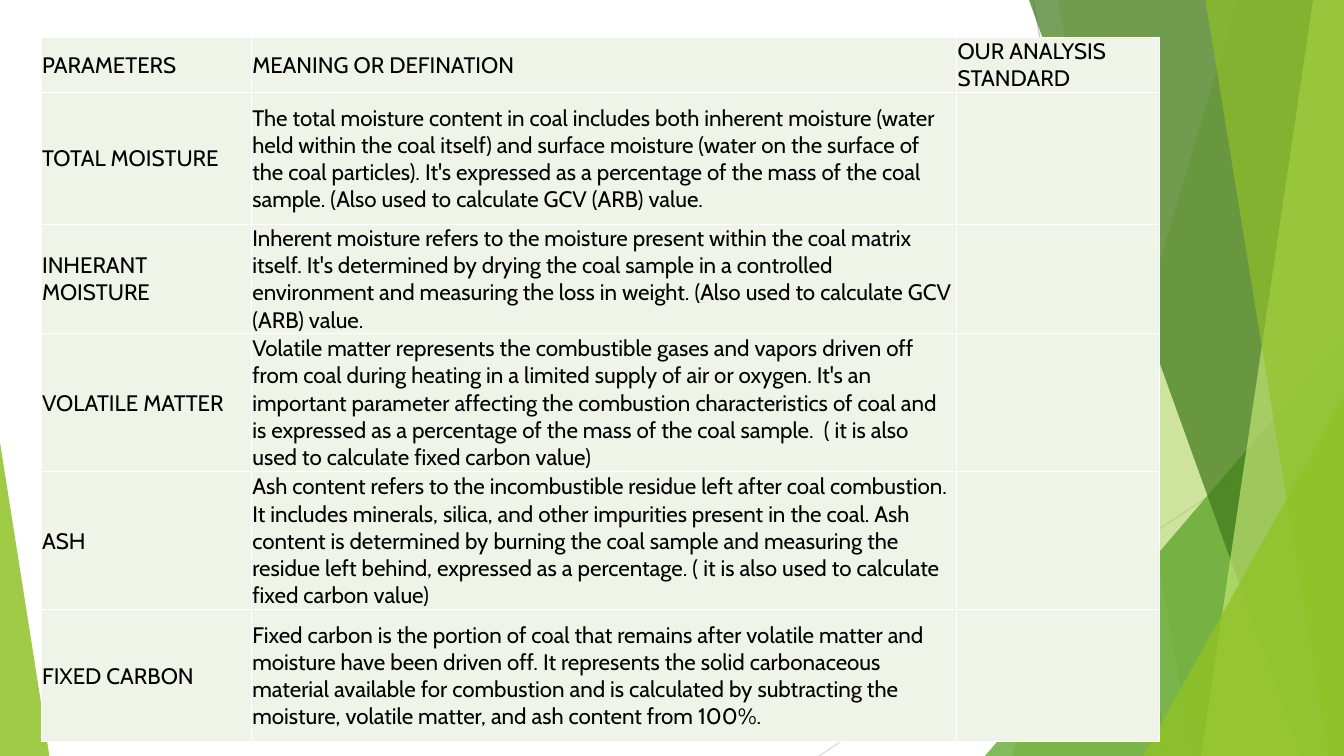
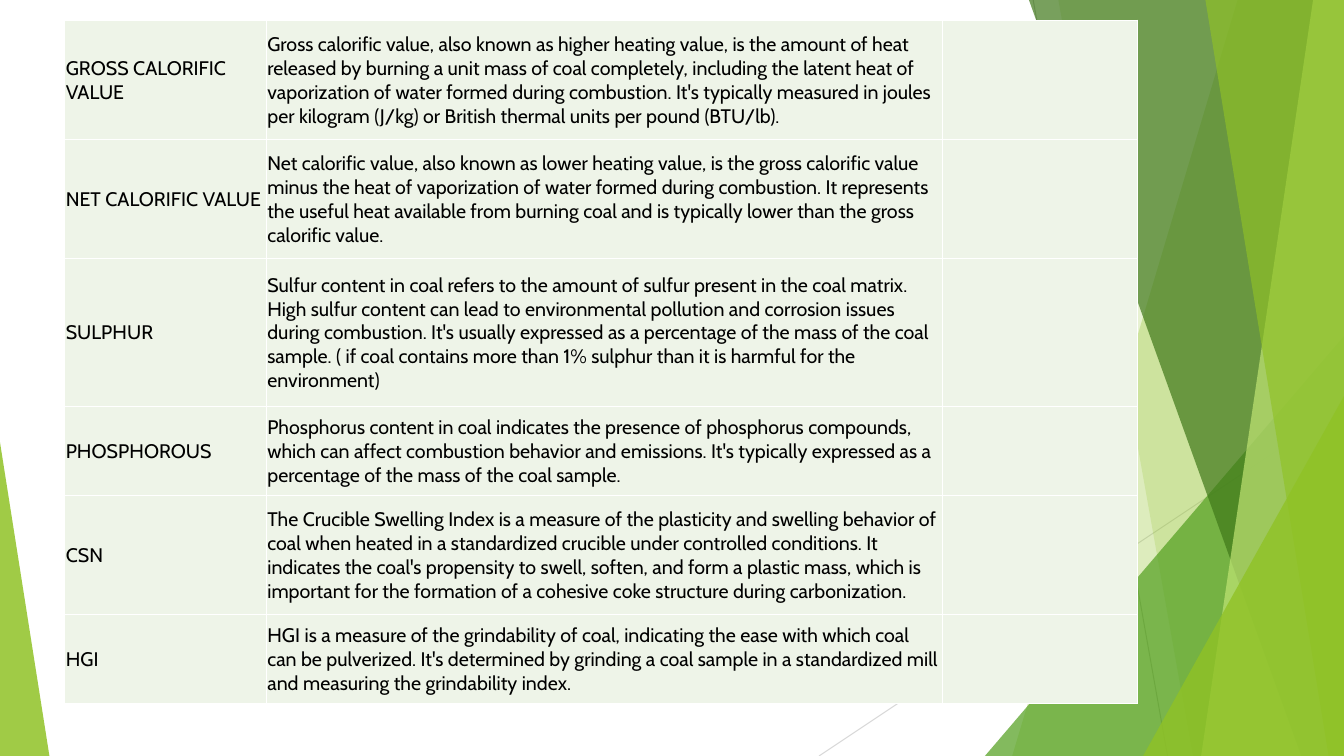
from dataclasses import dataclass
from typing import Any, Union

from lxml.etree import SubElement
from pptx import Presentation
from pptx.dml.color import RGBColor
from pptx.enum.shapes import MSO_CONNECTOR, MSO_SHAPE
from pptx.enum.text import MSO_ANCHOR
from pptx.oxml import parse_xml
from pptx.oxml.ns import nsdecls, qn
from pptx.util import Pt

WIDTH, HEIGHT = 960, 540
BLANK_LAYOUT = 6
FONT = "Cabin"
TEXT, PAPER, CELL = "000000", "FFFFFF", "EEF4E8"
LIME, GREEN, FOREST, PALE = "90C226", "54A021", "3F7819", "C0E474"


@dataclass(frozen=True)
class Ray:
    start: tuple[float, float]
    end: tuple[float, float]
    colour: str


@dataclass(frozen=True)
class Band:
    top_x: float
    bottom_x: float
    colour: str
    opacity: int


@dataclass(frozen=True)
class Wedge:
    left: float
    top: float
    width: float
    apex: float
    colour: str
    opacity: int


@dataclass(frozen=True)
class Parameter:
    name: str
    meaning: str
    height: float
    standard: str = ""


@dataclass(frozen=True)
class ParameterTable:
    left: float
    top: float
    columns: tuple[float, ...]
    size: float
    rows: tuple[Parameter, ...]


Facet = Union[Ray, Band, Wedge]

FACETS: tuple[Facet, ...] = (
    Ray((738, 0), (834, 540), "BFBFBF"),
    Ray((960, 290), (585, 540), "D9D9D9"),
    Band(884, 723, LIME, 30),
    Band(756, 852, LIME, 20),
    Wedge(703.5, 240, 256.5, 1, GREEN, 72),
    Band(735, 929.5, FOREST, 70),
    Band(938, 858, PALE, 70),
    Band(861, 949, LIME, 65),
    Wedge(816.5, 283, 143.5, 1, LIME, 80),
    Wedge(0, 316, 35.3, 0, LIME, 85),
)

TABLES = (
    ParameterTable(29.4, 26.6, (150.2, 503.7, 144.8), 16, (
        Parameter("PARAMETERS", "MEANING OR DEFINATION", 38.4, "OUR ANALYSIS STANDARD"),
        Parameter(
            "TOTAL MOISTURE",
            "The total moisture content in coal includes both inherent moisture (water held within "
            "the coal itself) and surface moisture (water on the surface of the coal particles). "
            "It's expressed as a percentage of the mass of the coal sample. (Also used to calculate "
            "GCV (ARB) value.", 94.3),
        Parameter(
            "INHERANT MOISTURE",
            "Inherent moisture refers to the moisture present within the coal matrix itself. It's "
            "determined by drying the coal sample in a controlled environment and measuring the "
            "loss in weight. (Also used to calculate GCV (ARB) value.", 75.6),
        Parameter(
            "VOLATILE MATTER",
            "Volatile matter represents the combustible gases and vapors driven off from coal "
            "during heating in a limited supply of air or oxygen. It's an important parameter "
            "affecting the combustion characteristics of coal and is expressed as a percentage of "
            "the mass of the coal sample.  ( it is also used to calculate fixed carbon value)", 98.6),
        Parameter(
            "ASH",
            "Ash content refers to the incombustible residue left after coal combustion. It "
            "includes minerals, silica, and other impurities present in the coal. Ash content is "
            "determined by burning the coal sample and measuring the residue left behind, "
            "expressed as a percentage. ( it is also used to calculate fixed carbon value)", 98.6),
        Parameter(
            "FIXED CARBON",
            "Fixed carbon is the portion of coal that remains after volatile matter and moisture "
            "have been driven off. It represents the solid carbonaceous material available for "
            "combustion and is calculated by subtracting the moisture, volatile matter, and ash "
            "content from 100%.", 94.3),
    )),
    ParameterTable(46.3, 14.5, (144, 483, 139), 14, (
        Parameter(
            "GROSS CALORIFIC VALUE",
            "Gross calorific value, also known as higher heating value, is the amount of heat "
            "released by burning a unit mass of coal completely, including the latent heat of "
            "vaporization of water formed during combustion. It's typically measured in joules per "
            "kilogram (J/kg) or British thermal units per pound (BTU/lb).", 85),
        Parameter(
            "NET CALORIFIC VALUE",
            "Net calorific value, also known as lower heating value, is the gross calorific value "
            "minus the heat of vaporization of water formed during combustion. It represents the "
            "useful heat available from burning coal and is typically lower than the gross "
            "calorific value.", 85),
        Parameter(
            "SULPHUR",
            "Sulfur content in coal refers to the amount of sulfur present in the coal matrix. "
            "High sulfur content can lead to environmental pollution and corrosion issues during "
            "combustion. It's usually expressed as a percentage of the mass of the coal sample. "
            "( if coal contains more than 1% sulphur than it is harmful for the environment)", 106),
        Parameter(
            "PHOSPHOROUS",
            "Phosphorus content in coal indicates the presence of phosphorus compounds, which can "
            "affect combustion behavior and emissions. It's typically expressed as a percentage of "
            "the mass of the coal sample.", 63.5),
        Parameter(
            "CSN",
            "The Crucible Swelling Index is a measure of the plasticity and swelling behavior of "
            "coal when heated in a standardized crucible under controlled conditions. It indicates "
            "the coal's propensity to swell, soften, and form a plastic mass, which is important "
            "for the formation of a cohesive coke structure during carbonization.", 85),
        Parameter(
            "HGI",
            "HGI is a measure of the grindability of coal, indicating the ease with which coal can "
            "be pulverized. It's determined by grinding a coal sample in a standardized mill and "
            "measuring the grindability index.", 63.5),
    )),
)


def colour(value: str) -> RGBColor:
    return RGBColor.from_string(value)


def apply_format(target: Any, values: dict[str, Any]) -> None:
    for name, value in values.items():
        setattr(target, name, value)


def paint(target: Any, value: str) -> None:
    target.fill.solid()
    target.fill.fore_color.rgb = colour(value)


def draw_ray(page: Any, ray: Ray) -> Any:
    points = [Pt(value) for value in (*ray.start, *ray.end)]
    connector = page.shapes.add_connector(MSO_CONNECTOR.STRAIGHT, *points)
    connector.line.width = Pt(0.75)
    connector.line.color.rgb = colour(ray.colour)
    SubElement(connector.element.spPr, qn("a:effectLst"))
    return connector


def draw_facet(page: Any, facet: Facet) -> Any:
    if isinstance(facet, Ray):
        return draw_ray(page, facet)
    if isinstance(facet, Band):
        corners = [(WIDTH, 0), (WIDTH, HEIGHT), (facet.bottom_x, HEIGHT)]
        outline = page.shapes.build_freeform(Pt(facet.top_x), 0)
        outline.add_line_segments([(Pt(x), Pt(y)) for x, y in corners])
        shape = outline.convert_to_shape()
    else:
        shape = page.shapes.add_shape(
            MSO_SHAPE.ISOSCELES_TRIANGLE, Pt(facet.left), Pt(facet.top),
            Pt(facet.width), Pt(HEIGHT - facet.top))
        shape.adjustments[0] = facet.apex
    paint(shape, facet.colour)
    tint = shape.element.spPr.find(f".//{qn('a:srgbClr')}")
    SubElement(tint, qn("a:alpha")).set("val", str(facet.opacity * 1000))
    shape.line.fill.background()
    shape.shadow.inherit = False
    return shape


def decorate_layout(layout: Any, page: Any) -> None:
    for placeholder in list(layout.placeholders):
        layout.shapes.element.remove(placeholder.element)
    shapes = [draw_facet(page, facet) for facet in FACETS]
    for shape in shapes:
        layout.shapes.element.append(shape.element)


def draw_borders(cell: Any) -> None:
    properties = cell._tc.get_or_add_tcPr()
    for position, side in enumerate(("lnL", "lnR", "lnT", "lnB")):
        properties.insert(position, parse_xml(
            f'<a:{side} {nsdecls("a")} w="12700"><a:solidFill>'
            f'<a:srgbClr val="{PAPER}"/></a:solidFill></a:{side}>'))


def fill_cell(cell: Any, text: str, size: float, anchor: MSO_ANCHOR) -> None:
    apply_format(cell, {
        "margin_left": Pt(0.7), "margin_right": Pt(0.7), "margin_top": Pt(0.7),
        "margin_bottom": 0, "vertical_anchor": anchor})
    paint(cell, CELL)
    draw_borders(cell)
    if text:
        span = cell.text_frame.paragraphs[0].add_run()
        apply_format(span, {"text": text})
        apply_format(span.font, {"name": FONT, "size": Pt(size), "bold": False})
        span.font.color.rgb = colour(TEXT)


def draw_table(page: Any, content: ParameterTable) -> None:
    height = sum(row.height for row in content.rows)
    table = page.shapes.add_table(
        len(content.rows), len(content.columns), Pt(content.left), Pt(content.top),
        Pt(sum(content.columns)), Pt(height)).table
    apply_format(table, {"first_row": False, "horz_banding": False})
    for column, width in zip(table.columns, content.columns):
        column.width = Pt(width)
    anchors = (MSO_ANCHOR.MIDDLE, MSO_ANCHOR.MIDDLE, MSO_ANCHOR.BOTTOM)
    for row, parameter in zip(table.rows, content.rows):
        row.height = Pt(parameter.height)
        texts = (parameter.name, parameter.meaning, parameter.standard)
        for cell, text, anchor in zip(row.cells, texts, anchors):
            fill_cell(cell, text, content.size, anchor)


def main() -> None:
    deck = Presentation()
    apply_format(deck, {"slide_width": Pt(WIDTH), "slide_height": Pt(HEIGHT)})
    layout = deck.slide_layouts[BLANK_LAYOUT]
    paint(layout.background, PAPER)
    pages = [deck.slides.add_slide(layout) for _ in TABLES]
    for page in pages:
        for placeholder in list(page.placeholders):
            page.shapes.element.remove(placeholder.element)
    decorate_layout(layout, pages[0])
    for page, content in zip(pages, TABLES):
        draw_table(page, content)
    deck.save("out.pptx")


if __name__ == "__main__":
    main()
